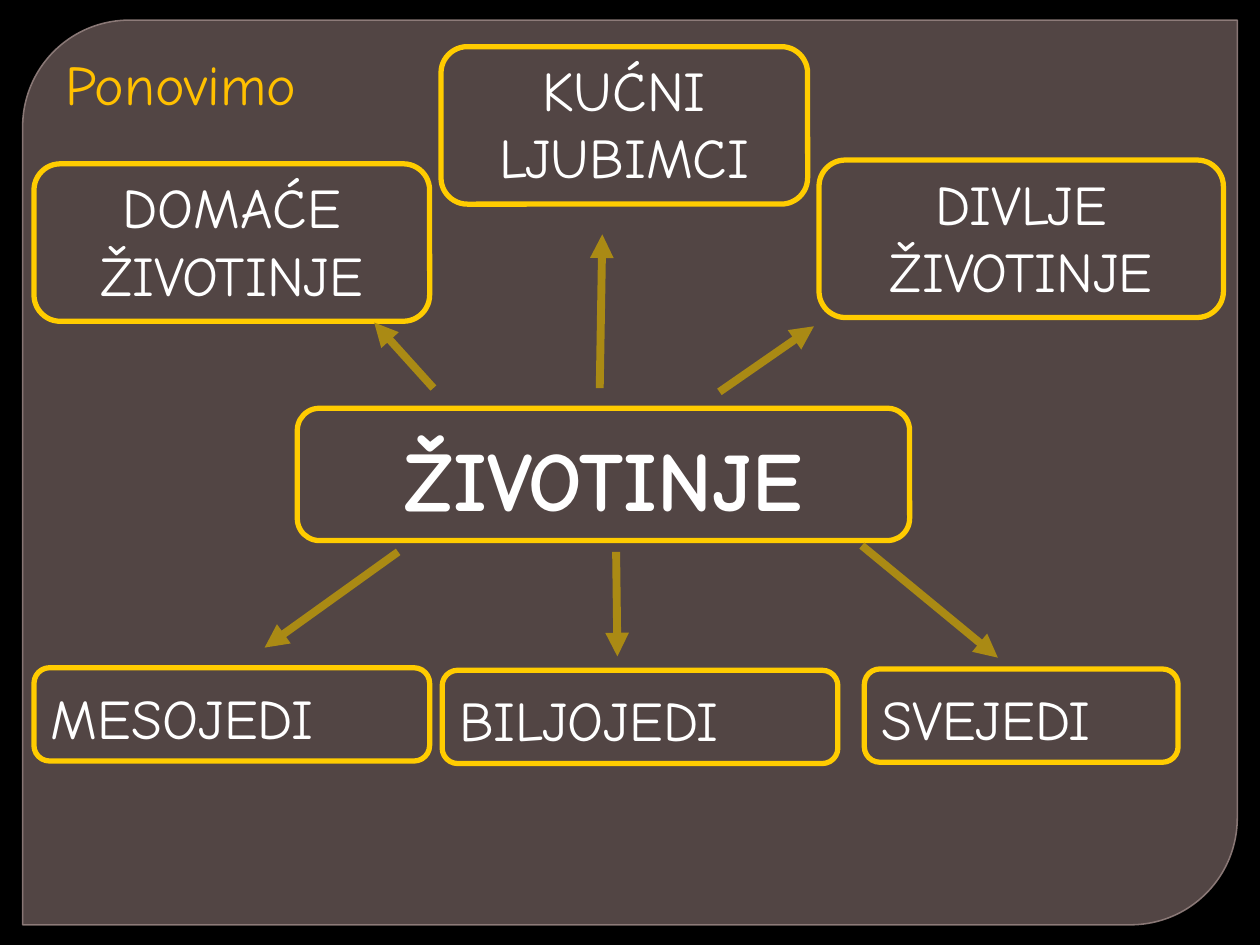
from dataclasses import dataclass

from pptx import Presentation, util as u
from pptx.dml.color import RGBColor
from pptx.enum import shapes, text
from pptx.oxml.ns import qn
from lxml import etree


@dataclass(frozen=True)
class Theme:
    font: str = "Comic Neue"
    background: str = "000000"
    frame: str = "7F6B69"
    frame_line: str = "968381"
    border: str = "FFCC00"
    arrow: str = "AA8A14"
    title: str = "FFC000"
    body: str = "FFFFFF"
    text_size: int = 32
    topic_size: int = 48


@dataclass(frozen=True)
class Box:
    left: float
    top: float
    width: float
    height: float

    def inner(self, left, top, width, height):
        return Box(self.left + left, self.top + top, width, height)

    def lengths(self):
        return [u.Inches(n * CELL) for n in (self.left, self.top, self.width, self.height)]


CELL = 0.1
THEME = Theme()
PAGE = Box(0, 0, 100, 75)


def rgb(value):
    return RGBColor.from_string(value)


def set_opacity(fill_format, percent):
    color = fill_format._xPr.find(qn("a:solidFill"))[0]
    etree.SubElement(color, qn("a:alpha")).set("val", str(percent * 1000))


def style_paragraph(paragraph, size, color, align, bold=False):
    paragraph.alignment = align
    paragraph.font.name = THEME.font
    paragraph.font.size = u.Pt(size)
    paragraph.font.bold = bold
    paragraph.font.color.rgb = rgb(color)


def add_frame(slide, box):
    frame = slide.shapes.add_shape(
        shapes.MSO_SHAPE.ROUND_2_DIAG_RECTANGLE, *box.inner(1.8, 1.6, 96.4, 71.8).lengths())
    frame.shadow.inherit = False
    frame.adjustments[0] = 0.118
    frame.adjustments[1] = 0
    frame.fill.solid()
    frame.fill.fore_color.rgb = rgb(THEME.frame)
    set_opacity(frame.fill, 65)
    frame.line.color.rgb = rgb(THEME.frame_line)
    frame.line.width = u.Pt(0.87)
    set_opacity(frame.line.fill, 88)
    slide.shapes._spTree.insert(2, frame._element)


def add_title(slide, box, wording):
    title = slide.shapes.title
    title.left, title.top, title.width, title.height = box.lengths()
    title.text_frame.text = wording
    title.text_frame.auto_size = text.MSO_AUTO_SIZE.NONE
    title.text_frame.vertical_anchor = text.MSO_ANCHOR.BOTTOM
    style_paragraph(title.text_frame.paragraphs[0], THEME.text_size, THEME.title,
                    text.PP_ALIGN.LEFT)


def add_card(slide, box, wording, align, size=THEME.text_size, bold=False):
    card = slide.shapes.add_shape(shapes.MSO_SHAPE.ROUNDED_RECTANGLE, *box.lengths())
    card.shadow.inherit = False
    card.adjustments[0] = 0.167
    card.fill.background()
    card.line.color.rgb = rgb(THEME.border)
    card.line.width = u.Pt(3)
    frame = card.text_frame
    frame.word_wrap = True
    frame.vertical_anchor = text.MSO_ANCHOR.BOTTOM
    frame.text = wording
    for paragraph in frame.paragraphs:
        style_paragraph(paragraph, size, THEME.body, align, bold)


def add_habitats(slide, box):
    for left, top, width, wording in (
        (0, 9.3, 31.4, "DOMAĆE\nŽIVOTINJE"),
        (32.3, 0, 29.1, "KUĆNI\nLJUBIMCI"),
        (62.3, 9, 32.1, "DIVLJE\nŽIVOTINJE"),
    ):
        add_card(slide, box.inner(left, top, width, 12.5), wording, text.PP_ALIGN.CENTER)


def add_diets(slide, box):
    for left, top, width, wording in (
        (0, 0, 31.4, "MESOJEDI"),
        (32.4, 0.2, 31.4, "BILJOJEDI"),
        (65.9, 0.1, 24.9, "SVEJEDI"),
    ):
        add_card(slide, box.inner(left, top, width, 7.4), wording, text.PP_ALIGN.LEFT)


def add_arrows(slide, box, spans):
    for left, top, across, down in spans:
        x, y, width, height = box.inner(left, top, across, down).lengths()
        arrow = slide.shapes.add_connector(
            shapes.MSO_CONNECTOR.STRAIGHT, x, y, x + width, y + height)
        arrow.line.color.rgb = rgb(THEME.arrow)
        arrow.line.width = u.Pt(4.5)
        etree.SubElement(arrow.line._get_or_add_ln(), qn("a:tailEnd")).set("type", "triangle")
        etree.SubElement(arrow._element.spPr, qn("a:effectLst"))


def add_topic(slide, box):
    add_card(slide, box, "ŽIVOTINJE", text.PP_ALIGN.CENTER, THEME.topic_size, True)
    add_arrows(slide, box, (
        (10.8, -1.6, -4.7, -5.2),
        (24, -1.6, 0.2, -12.2),
        (33.5, -1.3, 7.5, -5.2),
        (8, 11.4, -10.6, 7.6),
        (25.3, 11.4, 0.1, 8.3),
        (44.8, 10.9, 10.8, 8.9),
    ))


def main():
    presentation = Presentation()
    presentation.slide_width, presentation.slide_height = PAGE.lengths()[2:]
    slide = presentation.slides.add_slide(presentation.slide_layouts[5])
    slide.background.fill.solid()
    slide.background.fill.fore_color.rgb = rgb(THEME.background)
    add_frame(slide, PAGE)
    add_title(slide, PAGE.inner(4.2, 2.4, 25.5, 7.4), "Ponovimo")
    add_habitats(slide, PAGE.inner(2.7, 3.7, 94.4, 21.8))
    add_topic(slide, PAGE.inner(23.6, 32.4, 48.6, 10.5))
    add_diets(slide, PAGE.inner(2.7, 53, 90.8, 7.6))
    presentation.save("out.pptx")


if __name__ == "__main__":
    main()
